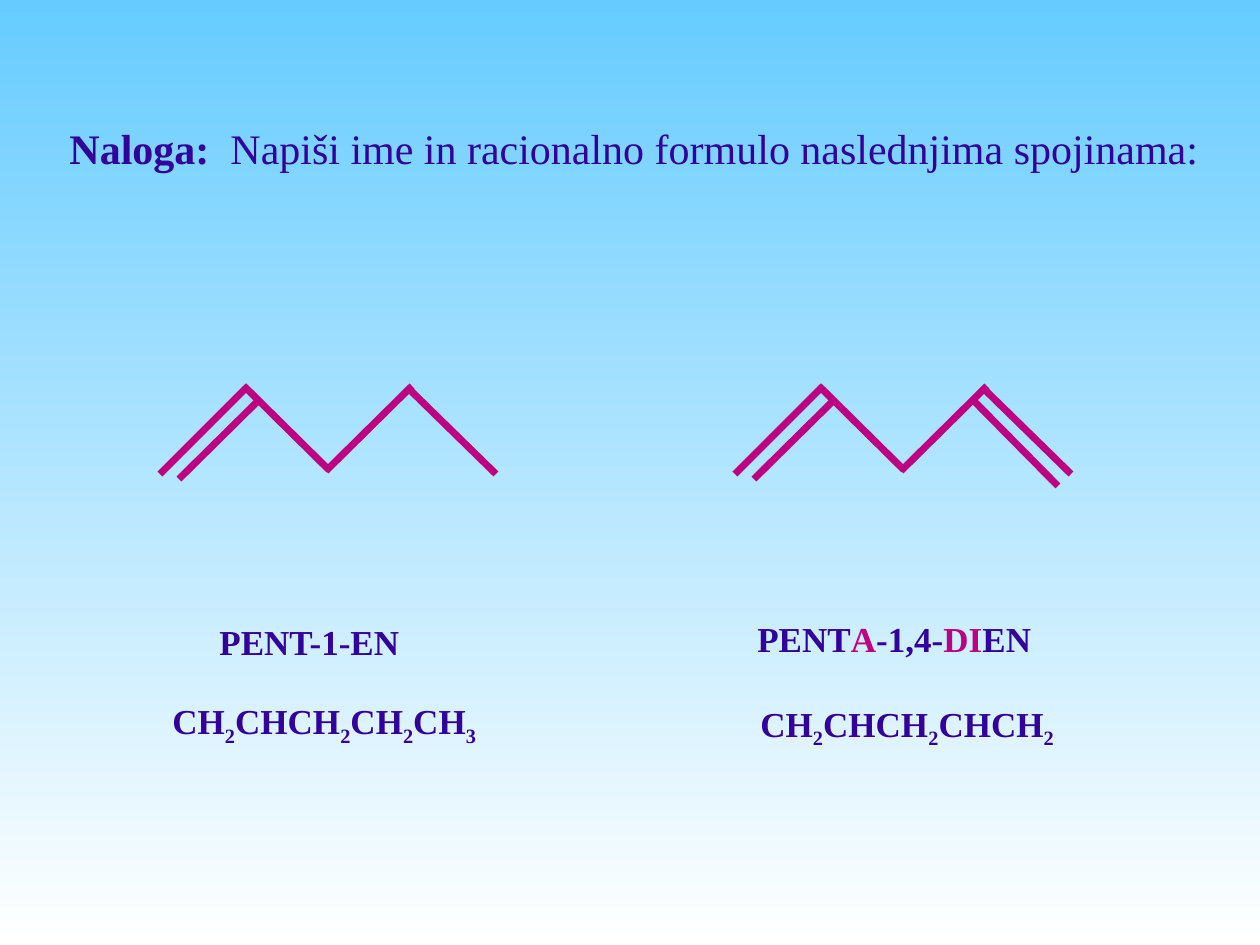
from lxml import etree
from pptx import Presentation
from pptx import util as u
from pptx.dml.color import RGBColor
from pptx.enum import shapes, text
from pptx.oxml import ns

THEME = {
    "font": "Times New Roman",
    "ink": RGBColor.from_string("330099"),
    "accent": RGBColor.from_string("BC0081"),
    "sky": (RGBColor.from_string("66CCFF"), RGBColor.from_string("FFFFFF")),
    "title_size": u.Pt(24),
    "label_size": u.Pt(20),
    "bond_width": u.Pt(4),
}
STYLES = {
    "plain": {"bold": False},
    "bold": {"bold": True},
    "accent": {"bold": True, "accent": True},
    "sub": {"bold": True, "baseline": "-25000"},
}

TITLE = {
    "area": (52, 116, 1164, 64),
    "spans": [("Naloga:  ", "bold"),
              ("Napiši ime in racionalno formulo naslednjima spojinama:", "plain")],
}
CHAIN = [(0, 474, 88, 386), (84, 386, 169, 470),
         (166, 471, 252, 386), (248, 388, 336, 474)]
FIRST_DOUBLE = (19, 479, 97, 402)
LAST_DOUBLE = (240, 402, 323, 486)
COMPOUNDS = [
    {
        "left": 160,
        "bonds": CHAIN + [FIRST_DOUBLE],
        "name": [("PENT-1-EN", "bold")],
        "name_area": (207, 614, 207, 55),
        "formula": "CH2CHCH2CH2CH3",
        "formula_area": (160, 693, 378, 55),
    },
    {
        "left": 735,
        "bonds": CHAIN + [LAST_DOUBLE, FIRST_DOUBLE],
        "name": [("PENT", "bold"), ("A", "accent"), ("-1,4-", "bold"),
                 ("DI", "accent"), ("EN", "bold")],
        "name_area": (745, 611, 354, 55),
        "formula": "CH2CHCH2CHCH2",
        "formula_area": (748, 696, 431, 55),
    },
]


def px(value):
    return u.Emu(round(value * 914400 / 126))


def formula_spans(formula):
    spans = []
    for letter in formula:
        style = "sub" if letter.isdigit() else "bold"
        if spans and spans[-1][1] == style:
            spans[-1] = (spans[-1][0] + letter, style)
        else:
            spans.append((letter, style))
    return spans


def write(box, spans, size, align, wrap):
    frame = box.text_frame
    frame_format = {
        "word_wrap": wrap,
        "auto_size": text.MSO_AUTO_SIZE.SHAPE_TO_FIT_TEXT,
        "vertical_anchor": text.MSO_ANCHOR.TOP,
    }
    for key, value in frame_format.items():
        setattr(frame, key, value)
    para = frame.paragraphs[0]
    para.alignment = align
    for words, style_name in spans:
        style = STYLES[style_name]
        span = para.add_run()
        span.text = words
        font_format = {"name": THEME["font"], "size": size, "bold": style["bold"]}
        for key, value in font_format.items():
            setattr(span.font, key, value)
        span.font.color.rgb = THEME["accent" if style.get("accent") else "ink"]
        if "baseline" in style:
            span._r.get_or_add_rPr().set("baseline", style["baseline"])


def add_title(page):
    box = page.shapes.title
    for key, value in zip(("left", "top", "width", "height"), TITLE["area"]):
        setattr(box, key, px(value))
    write(box, TITLE["spans"], THEME["title_size"], text.PP_ALIGN.CENTER, False)


def add_label(page, area, spans, wrap=True):
    box = page.shapes.add_textbox(*map(px, area))
    write(box, spans, THEME["label_size"], text.PP_ALIGN.LEFT, wrap)


def add_molecule(page, left, bonds):
    molecule = page.shapes.add_group_shape()
    for x1, y1, x2, y2 in bonds:
        bond = molecule.shapes.add_connector(
            shapes.MSO_CONNECTOR.STRAIGHT,
            px(left + x1), px(y1), px(left + x2), px(y2))
        bond.line.color.rgb = THEME["accent"]
        bond.line.width = THEME["bond_width"]
        etree.SubElement(bond._element.spPr, ns.qn("a:effectLst"))


def paint_background(page):
    fill = page.background.fill
    fill.gradient()
    fill.gradient_angle = 270
    for stop, colour in zip(fill.gradient_stops, THEME["sky"]):
        stop.color.rgb = colour


def main():
    deck = Presentation()
    deck.slide_width, deck.slide_height = px(1260), px(945)
    page = deck.slides.add_slide(deck.slide_layouts.get_by_name("Title Only"))
    paint_background(page)
    add_title(page)
    for compound in COMPOUNDS:
        add_molecule(page, compound["left"], compound["bonds"])
        add_label(page, compound["name_area"], compound["name"])
        add_label(page, compound["formula_area"], formula_spans(compound["formula"]))
    deck.save("out.pptx")


if __name__ == "__main__":
    main()
